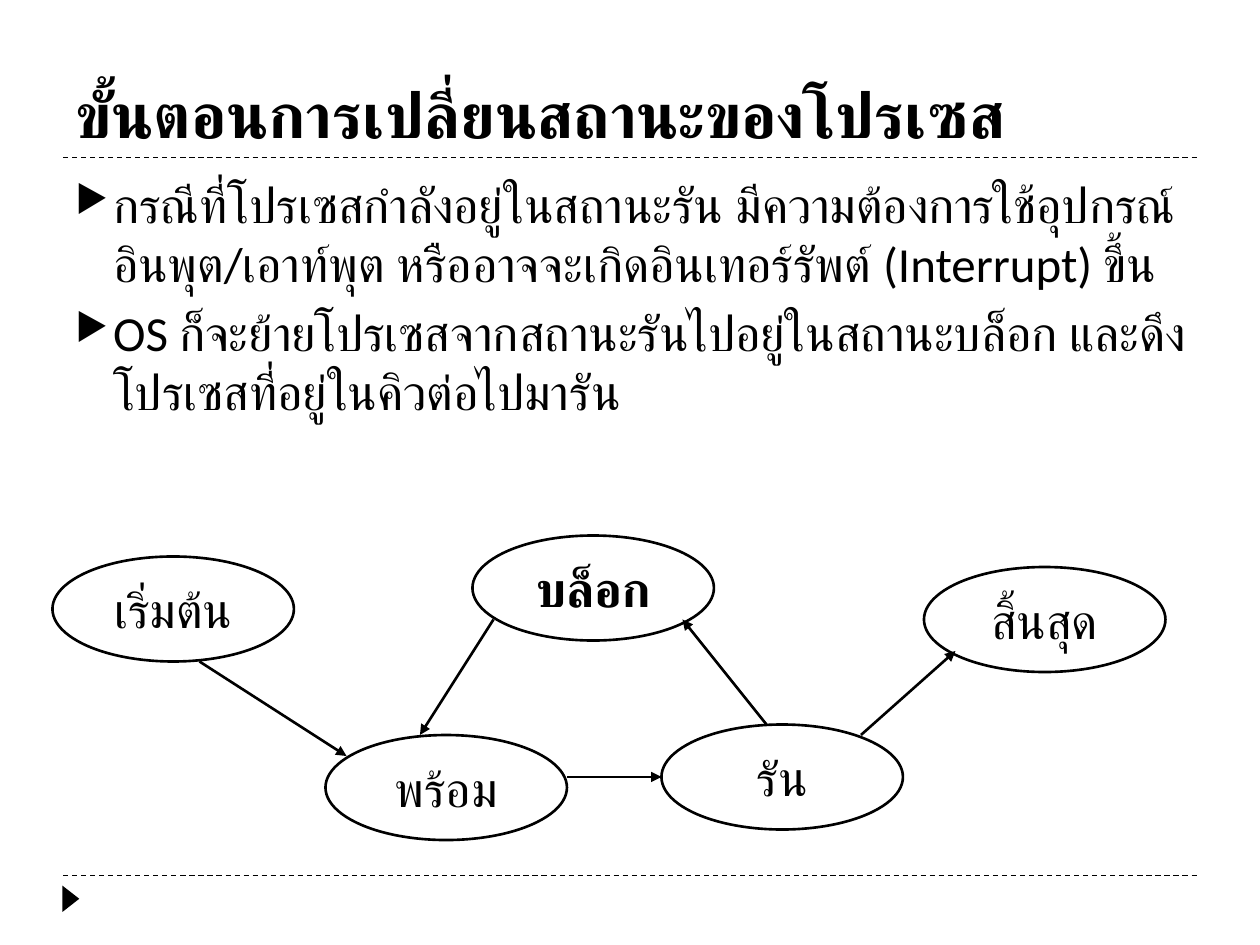
"""Build the process state slide on a grid of 120 columns by 90 rows."""
from lxml import etree
from pptx import Presentation, util as u
from pptx.dml.color import RGBColor
from pptx.enum import dml, shapes as sh, text as tx
from pptx.oxml import ns

INK, PAPER = "000000", "FFFFFF"
deck = Presentation()
deck.slide_width, deck.slide_height = u.Inches(10), u.Inches(7.5)
page = deck.slides.add_slide(deck.slide_layouts[6])
cell = deck.slide_width / 120


def grid(*marks):
    return [round(mark * cell) for mark in marks]


def tint(part, code):
    part.solid()
    part.fore_color.rgb = RGBColor.from_string(code)


tint(page.background.fill, PAPER)

# kind, columns and rows from start to end, width
lines = [("dash", 6, 83.4, 114, 83.4, 0.75), ("dash", 6, 15, 114, 15, 0.75)]
lines += [("arrow", *ends, 1.5) for ends in [
    (19, 63, 33, 72), (54, 74, 63, 74), (82, 70, 91, 62),
    (73, 69, 65, 59), (47, 59, 40, 70)]]
states = [("เริ่มต้น", 5, 53, False), ("รัน", 63, 69, False),
          ("พร้อม", 31, 70, False), ("สิ้นสุด", 88, 54, False),
          ("บล็อก", 45, 51, True)]
points = [
    "กรณีที่โปรเซสกำลังอยู่ในสถานะรัน มีความต้องการใช้อุปกรณ์อินพุต/เอาท์พุต "
    "หรืออาจจะเกิดอินเทอร์รัพต์ (Interrupt) ขึ้น",
    "OS ก็จะย้ายโปรเซสจากสถานะรันไปอยู่ในสถานะบล็อก "
    "และดึงโปรเซสที่อยู่ในคิวต่อไปมารัน"]

mark = page.shapes.add_shape(
    sh.MSO_SHAPE.ISOSCELES_TRIANGLE, *grid(5.5, 84.8, 2.5, 1.6))
mark.rotation = 90
mark.shadow.inherit = False
tint(mark.fill, INK)
mark.line.fill.background()

title = page.shapes.add_textbox(*grid(6, 2, 108, 13))
body = page.shapes.add_textbox(*grid(6, 16, 108, 64.8))
jobs = [
    (title, ["ขั้นตอนการเปลี่ยนสถานะของโปรเซส"],
     {"word_wrap": True, "vertical_anchor": tx.MSO_ANCHOR.BOTTOM}, {},
     {"size": u.Pt(36), "bold": True}),
    (body, points,
     {"word_wrap": True, "vertical_anchor": tx.MSO_ANCHOR.TOP},
     {"space_before": u.Pt(6)}, {"size": u.Pt(28)})]

for name, left, top, bold in states:
    oval = page.shapes.add_shape(sh.MSO_SHAPE.OVAL, *grid(left, top, 23, 10))
    oval.shadow.inherit = False
    tint(oval.fill, PAPER)
    tint(oval.line.fill, INK)
    oval.line.width = u.Pt(1.5)
    jobs.append((
        oval, [name],
        {"word_wrap": False, "vertical_anchor": tx.MSO_ANCHOR.MIDDLE},
        {"alignment": tx.PP_ALIGN.CENTER}, {"size": u.Pt(28), "bold": bold}))

for box, words, setup, style, face in jobs:
    frame = box.text_frame
    frame.text = "\n".join(words)
    for para in frame.paragraphs:
        font = para.runs[0].font
        tint(font.fill, INK)
        for part, values in ((frame, setup), (para, style),
                             (font, {"name": "Calibri", **face})):
            for key, value in values.items():
                setattr(part, key, value)

for para in body.text_frame.paragraphs:
    props = para._p.get_or_add_pPr()
    props.set("marL", str(u.Inches(0.3)))
    props.set("indent", str(u.Inches(-0.3)))
    color = etree.SubElement(props, ns.qn("a:buClr"))
    etree.SubElement(color, ns.qn("a:srgbClr"), val=INK)
    etree.SubElement(props, ns.qn("a:buSzPct"), val="76000")
    etree.SubElement(props, ns.qn("a:buChar"), char="▶")

for kind, *ends, width in lines:
    link = page.shapes.add_connector(sh.MSO_CONNECTOR.STRAIGHT, *grid(*ends))
    tint(link.line.fill, INK)
    link.line.width = u.Pt(width)
    if kind == "dash":
        link.line.dash_style = dml.MSO_LINE.DASH
    else:
        etree.SubElement(link.line._get_or_add_ln(), ns.qn("a:tailEnd"),
                         type="triangle")
    etree.SubElement(link._element.spPr, ns.qn("a:effectLst"))

deck.save("out.pptx")
